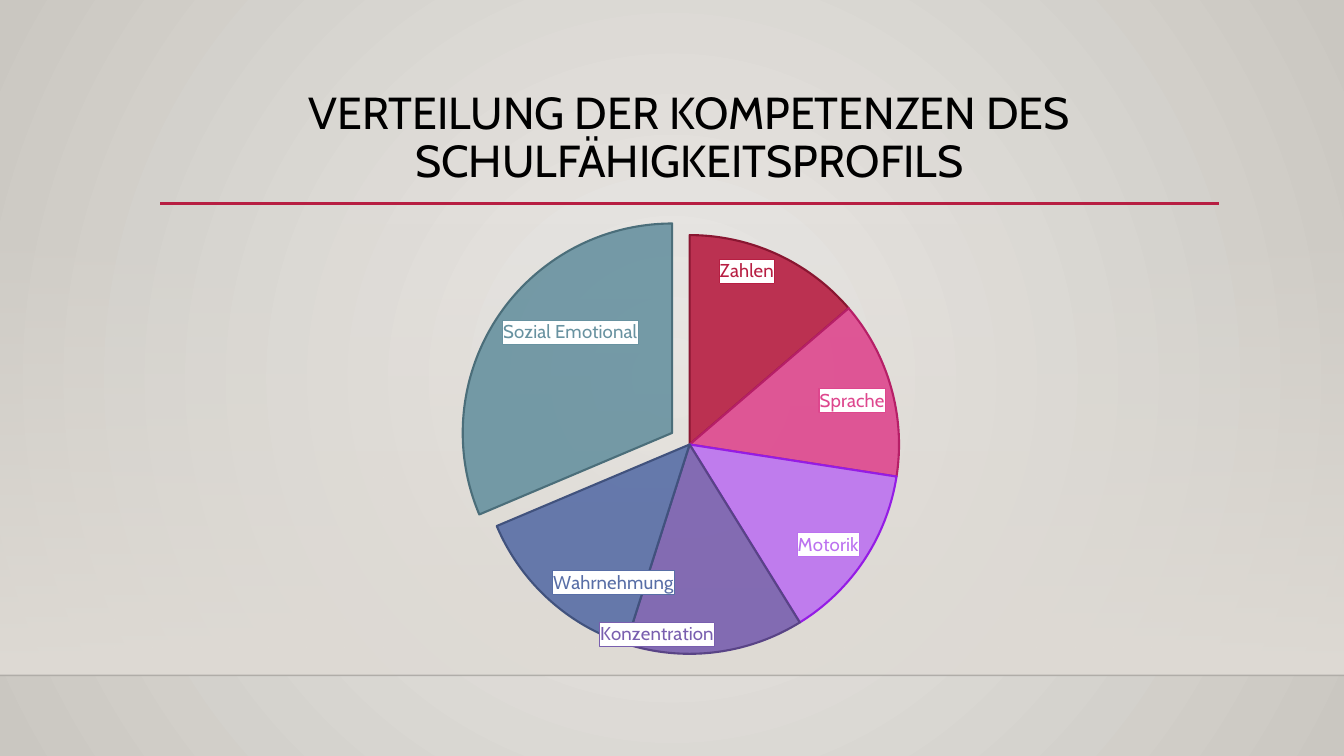
from dataclasses import dataclass

from pptx import Presentation, util as u
from pptx.chart.data import CategoryChartData
from pptx.dml.color import RGBColor
from pptx.enum import chart as ch, shapes, text
from pptx.oxml import parse_xml
from pptx.oxml.ns import nsdecls, qn

W, H = 13.33, 7.5


@dataclass(frozen=True)
class Theme:
    font: str = "Cabin"
    title_size: float = 32
    label_size: float = 13.3
    ink: str = "000000"
    accent: str = "B71E42"
    wall_light: str = "ECEAE7"
    wall_dark: str = "CAC7C1"
    floor: str = "DFDBD5"
    label_fill: str = "FFFFFF"


T = Theme()

# Category, value, slice colour, outline colour
SKILLS = [
    ("Zahlen", 14, "B71E42", "891631"),
    ("Sprache", 14, "DE478E", "B61F67"),
    ("Motorik", 14, "BC72F0", "951CE5"),
    ("Konzentration", 14, "795FAF", "594486"),
    ("Wahrnehmung", 14, "586EA6", "41527D"),
    ("Sozial Emotional", 32, "6892A0", "4B6E7A"),
]


def rgb(value):
    return RGBColor.from_string(value)


def inches(*lengths):
    return [u.Inches(n) for n in lengths]


def set_alpha(fill_parent, percent):
    for color in fill_parent.iter(qn("a:srgbClr")):
        color.append(parse_xml(f'<a:alpha {nsdecls("a")} val="{percent * 1000}"/>'))


def gradient(stops, direction):
    """Gradient fill from (position, colour, opacity) stops."""
    stop_xml = "".join(
        f'<a:gs pos="{pos * 1000}"><a:srgbClr val="{color}">'
        f'<a:alpha val="{opacity * 1000}"/></a:srgbClr></a:gs>'
        for pos, color, opacity in stops)
    return parse_xml(f'<a:gradFill {nsdecls("a")} rotWithShape="1">'
                     f'<a:gsLst>{stop_xml}</a:gsLst>{direction}</a:gradFill>')


def swap_solid(parent, new_fill):
    solid = next(parent.iter(qn("a:solidFill")))
    solid.getparent().replace(solid, new_fill)


def add_rule(slide, left, top, width, color, weight, opacity=100):
    line = slide.shapes.add_connector(
        shapes.MSO_CONNECTOR.STRAIGHT, *inches(left, top, left + width, top))
    line.line.color.rgb = rgb(color)
    line.line.width = u.Pt(weight)
    sp_pr = line.element.spPr
    if opacity < 100:
        set_alpha(sp_pr, opacity)
    sp_pr.append(parse_xml(f'<a:effectLst {nsdecls("a")}/>'))


def add_backdrop(slide, floor_top, floor_height):
    # Radial wall
    slide.background.fill.solid()
    slide.background.fill.fore_color.rgb = rgb(T.wall_light)
    swap_solid(slide.element, gradient(
        [(0, T.wall_light, 100), (100, T.wall_dark, 100)],
        '<a:path path="circle"><a:fillToRect l="50000" t="50000" r="50000" b="50000"/></a:path>'))
    # Fading band and the edge below it
    sp = slide.shapes.add_shape(
        shapes.MSO_SHAPE.RECTANGLE, *inches(0, floor_top, W, floor_height))
    sp.shadow.inherit = False
    sp.line.fill.background()
    sp.fill.solid()
    sp.fill.fore_color.rgb = rgb(T.floor)
    swap_solid(sp.element.spPr, gradient(
        [(0, T.floor, 0), (100, T.floor, 100)], '<a:lin ang="5400000" scaled="0"/>'))
    add_rule(slide, 0, floor_top + floor_height, W, T.ink, 1, 20)


def add_title(slide, left, top, width, height, words):
    tf = slide.shapes.add_textbox(*inches(left, top, width, height)).text_frame
    tf.word_wrap = True
    tf.vertical_anchor = text.MSO_ANCHOR.TOP
    p = tf.paragraphs[0]
    p.text = words
    p.alignment = text.PP_ALIGN.CENTER
    p.line_spacing = 0.9
    p.font.name, p.font.size = T.font, u.Pt(T.title_size)
    p.font.color.rgb = rgb(T.ink)
    add_rule(slide, left, top + height + 0.02, width, T.accent, 2.5)


def style_slice(point, color, outline):
    point.format.fill.solid()
    point.format.fill.fore_color.rgb = rgb(color)
    point.format.line.color.rgb = rgb(outline)
    point.format.line.width = u.Pt(1.5)
    label = point.data_label
    label.position = ch.XL_LABEL_POSITION.INSIDE_END
    label.font.name, label.font.size = T.font, u.Pt(T.label_size)
    label.font.color.rgb = rgb(color)


def box_label(label, color):
    """Show the category name in a filled, outlined box."""
    label.find(qn("c:showVal")).set("val", "0")
    label.find(qn("c:showPercent")).set("val", "0")
    label.find(qn("c:showCatName")).set("val", "1")
    label.find(qn("c:txPr")).addprevious(parse_xml(
        f'<c:spPr {nsdecls("c", "a")}>'
        f'<a:solidFill><a:srgbClr val="{T.label_fill}"/></a:solidFill>'
        f'<a:ln w="9525"><a:solidFill><a:srgbClr val="{color}"/></a:solidFill></a:ln></c:spPr>'))


def add_skill_pie(slide, left, top, width, height):
    data = CategoryChartData()
    data.categories = [name for name, *_ in SKILLS]
    data.add_series("Series 1", [value for _, value, *_ in SKILLS])
    chart = slide.shapes.add_chart(
        ch.XL_CHART_TYPE.PIE, *inches(left, top, width, height), data).chart
    chart.has_legend = chart.has_title = False
    chart.font.name, chart.font.size = T.font, u.Pt(10)
    chart.font.color.rgb = rgb(T.ink)
    plot = chart.plots[0]
    plot.vary_by_categories = True
    for i, (_, _, color, outline) in enumerate(SKILLS):
        style_slice(plot.series[0].points[i], color, outline)

    # Translucent slices, the last one pulled out
    slices = list(chart.element.iter(qn("c:dPt")))
    for dpt in slices:
        set_alpha(dpt.find(qn("c:spPr")).find(qn("a:solidFill")), 90)
    slices[-1].find(qn("c:spPr")).addprevious(
        parse_xml(f'<c:explosion {nsdecls("c")} val="10"/>'))
    for label, (_, _, color, _) in zip(chart.element.iter(qn("c:dLbl")), SKILLS):
        box_label(label, color)

    # Square plot area in the middle of the box
    share = 0.94
    plot_w = share * height / width
    area = next(chart.element.iter(qn("c:plotArea")))
    for old in area.findall(qn("c:layout")):
        area.remove(old)
    area.insert(0, parse_xml(
        f'<c:layout {nsdecls("c")}><c:manualLayout><c:layoutTarget val="inner"/>'
        f'<c:xMode val="edge"/><c:yMode val="edge"/>'
        f'<c:x val="{(1 - plot_w) / 2:.4f}"/><c:y val="{(1 - share) / 2:.4f}"/>'
        f'<c:w val="{plot_w:.4f}"/><c:h val="{share}"/></c:manualLayout></c:layout>'))


def main():
    prs = Presentation()
    prs.slide_width, prs.slide_height = inches(W, H)
    slide = prs.slides.add_slide(prs.slide_layouts[6])
    left, width = 1.59, 10.5
    add_backdrop(slide, 2.21, 4.49)
    add_title(slide, left, 0.85, width, 1.15,
              "VERTEILUNG DER KOMPETENZEN DES SCHULFÄHIGKEITSPROFILS")
    add_skill_pie(slide, left, 2.2, width, 4.42)
    prs.save("out.pptx")


if __name__ == "__main__":
    main()
